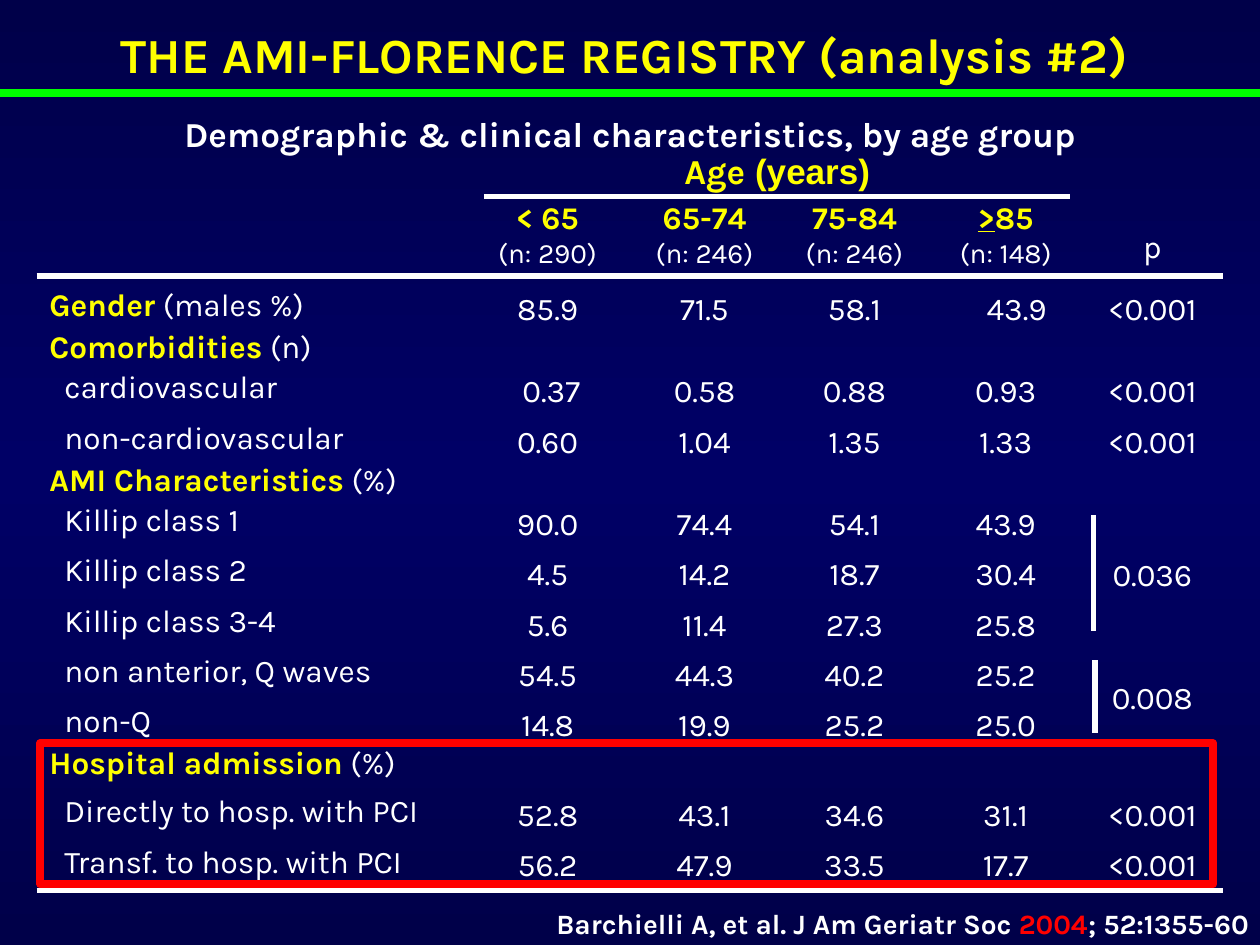
import copy
import dataclasses

import pptx
import pptx.dml.color
import pptx.enum.shapes
import pptx.enum.text
import pptx.oxml
import pptx.oxml.ns
import pptx.util

Pt = pptx.util.Pt
qn = pptx.oxml.ns.qn
Align = pptx.enum.text.PP_ALIGN
Anchor = pptx.enum.text.MSO_ANCHOR


@dataclasses.dataclass(frozen=True)
class Theme:
    font: str = "Karla"
    second_font: str = "Arial"
    white: str = "FFFFFF"
    yellow: str = "FFFF00"
    red: str = "FF0000"
    green: str = "00FF00"
    edge_blue: str = "000049"
    middle_blue: str = "000066"
    title: int = 28
    subtitle: int = 20
    body: int = 18
    small: int = 16


THEME = Theme()
HEADING = {"color": THEME.yellow, "bold": True}
NO_GRID_STYLE = "{2D5ABB26-0587-4C30-8999-92F81FD0307C}"

TABLE_LEFT, TABLE_TOP = 21, 111
COLUMN_WIDTHS = [245.5, 92.9, 86.4, 85, 87.8, 79.9]
HEADER_HEIGHT, ROW_HEIGHT, CLOSE_ROW, SECTION_ROW = 52, 28.8, 25, 21.5
INSET, VALUE_TOP, LABEL_TOP, LABEL_INDENT = 7.2, 3.6, 1.4, 8.6

AGE_GROUPS = [
    ([("< 65", HEADING)], "(n: 290)"),
    ([("65-74", HEADING)], "(n: 246)"),
    ([("75-84", HEADING)], "(n: 246)"),
    ([(">", {**HEADING, "underline": True}), ("85", HEADING)], "(n: 148)"),
]

# Row height, yellow heading, label, values by age group, p
ROWS = [
    (CLOSE_ROW, "Gender", " (males %)", "85.9 71.5 58.1 43.9", "<0.001"),
    (SECTION_ROW, "Comorbidities", " (n)", "", ""),
    (29, "", "cardiovascular", "0.37 0.58 0.88 0.93", "<0.001"),
    (CLOSE_ROW, "", "non-cardiovascular", "0.60 1.04 1.35 1.33", "<0.001"),
    (SECTION_ROW, "AMI Characteristics", " (%)", "", ""),
    (ROW_HEIGHT, "", "Killip class 1", "90.0 74.4 54.1 43.9", "0.036"),
    (ROW_HEIGHT, "", "Killip class 2", "4.5 14.2 18.7 30.4", ""),
    (ROW_HEIGHT, "", "Killip class 3-4", "5.6 11.4 27.3 25.8", ""),
    (ROW_HEIGHT, "", "non anterior, Q waves", "54.5 44.3 40.2 25.2", "0.008"),
    (25.3, "", "non-Q", "14.8 19.9 25.2 25.0", ""),
    (26, "Hospital admission", " (%)", "", ""),
    (ROW_HEIGHT, "", "Directly to hosp. with PCI", "52.8 43.1 34.6 31.1", "<0.001"),
    (ROW_HEIGHT, "", "Transf. to hosp. with PCI", "56.2 47.9 33.5 17.7", "<0.001"),
]
SHARED_P_ROWS = [(6, 8), (9, 10)]
# Extra left inset of values set off centre, by (row, column)
VALUE_SHIFTS = {(1, 4): 12.6, (3, 1): 4.2}


def rgb(color):
    return pptx.dml.color.RGBColor.from_string(color)


def write_text(frame, paragraphs, align=Align.CENTER, line_spacing=None, **base):
    """Each paragraph is a list of (text, format changes) runs."""
    for index, runs in enumerate(paragraphs):
        paragraph = frame.add_paragraph() if index else frame.paragraphs[0]
        paragraph.alignment = align
        if line_spacing:
            paragraph.line_spacing = line_spacing
        for text, changes in runs:
            look = {"size": THEME.body, "font": THEME.font, "color": THEME.white,
                    "bold": False, "underline": False, **base, **changes}
            run = paragraph.add_run()
            run.text = text
            run.font.size = Pt(look["size"])
            run.font.name = look["font"]
            run.font.bold = look["bold"]
            run.font.underline = look["underline"]
            run.font.color.rgb = rgb(look["color"])


def set_margins(target, left=INSET, top=VALUE_TOP, right=INSET, bottom=0):
    target.margin_left, target.margin_top = Pt(left), Pt(top)
    target.margin_right, target.margin_bottom = Pt(right), Pt(bottom)


def add_text_box(slide, left, top, width, height, paragraphs, anchor=Anchor.TOP, **look):
    box = slide.shapes.add_textbox(Pt(left), Pt(top), Pt(width), Pt(height))
    frame = box.text_frame
    frame.word_wrap = True
    frame.vertical_anchor = anchor
    write_text(frame, paragraphs, **look)
    return frame


def add_line(slide, x1, y1, x2, y2, color=THEME.white, weight=3):
    line = slide.shapes.add_connector(
        pptx.enum.shapes.MSO_CONNECTOR.STRAIGHT, Pt(x1), Pt(y1), Pt(x2), Pt(y2))
    line.line.color.rgb = rgb(color)
    line.line.width = Pt(weight)
    line._element.spPr.append(pptx.oxml.parse_xml(
        '<a:effectLst xmlns:a="http://schemas.openxmlformats.org/drawingml/2006/main"/>'))


def add_frame(slide, left, top, width, height):
    shape = slide.shapes.add_shape(pptx.enum.shapes.MSO_SHAPE.RECTANGLE,
                                   Pt(left), Pt(top), Pt(width), Pt(height))
    shape.shadow.inherit = False
    shape.fill.background()
    shape.line.color.rgb = rgb(THEME.red)
    shape.line.width = Pt(4.5)


def paint_background(slide):
    fill = slide.background.fill
    fill.gradient()
    fill.gradient_angle = 90
    first = next(slide._element.iter(qn("a:gs")))
    first.addnext(copy.deepcopy(first))
    colors = [THEME.edge_blue, THEME.middle_blue, THEME.edge_blue]
    for stop, position, color in zip(fill.gradient_stops, [0, 0.5, 1], colors):
        stop.position = position
        stop.color.rgb = rgb(color)


def fill_header(table):
    for column, (group, count) in enumerate(AGE_GROUPS, start=1):
        write_text(table.cell(0, column).text_frame,
                   [group, [(count, {"size": THEME.small})]])
    p_cell = table.cell(0, len(COLUMN_WIDTHS) - 1)
    write_text(p_cell.text_frame, [[("p", {})]])
    p_cell.vertical_anchor = Anchor.BOTTOM
    set_margins(p_cell, bottom=11)


def fill_row(table, row, heading, label, values, p_value):
    p_column = len(COLUMN_WIDTHS) - 1
    label_cell = table.cell(row, 0)
    set_margins(label_cell, left=INSET + (0 if heading else LABEL_INDENT),
                top=LABEL_TOP if values else 0)
    runs = [(heading, HEADING)] if heading else []
    write_text(label_cell.text_frame, [runs + [(label, {})]], align=Align.LEFT)
    if not values:
        label_cell.merge(table.cell(row, p_column))
    for column, value in enumerate(values.split(), start=1):
        cell = table.cell(row, column)
        set_margins(cell, left=INSET + VALUE_SHIFTS.get((row, column), 0))
        write_text(cell.text_frame, [[(value, {})]])
    if p_value:
        write_text(table.cell(row, p_column).text_frame, [[(p_value, {})]])


def add_registry_table(slide):
    heights = [HEADER_HEIGHT] + [row[0] for row in ROWS]
    table = slide.shapes.add_table(
        len(heights), len(COLUMN_WIDTHS), Pt(TABLE_LEFT), Pt(TABLE_TOP),
        Pt(sum(COLUMN_WIDTHS)), Pt(sum(heights))).table
    table.first_row = table.horz_banding = False
    table._tbl.tblPr.find(qn("a:tableStyleId")).text = NO_GRID_STYLE
    for column, width in zip(table.columns, COLUMN_WIDTHS):
        column.width = Pt(width)
    for row, height in zip(table.rows, heights):
        row.height = Pt(height)
    for cell in table.iter_cells():
        cell.fill.background()
        set_margins(cell)
    fill_header(table)
    for index, (_, *content) in enumerate(ROWS, start=1):
        fill_row(table, index, *content)
    p_column = len(COLUMN_WIDTHS) - 1
    for first, last in SHARED_P_ROWS:
        cell = table.cell(first, p_column)
        cell.merge(table.cell(last, p_column))
        cell.vertical_anchor = Anchor.MIDDLE
        set_margins(cell, top=0)


def main():
    presentation = pptx.Presentation()
    presentation.slide_width, presentation.slide_height = Pt(720), Pt(540)
    slide = presentation.slides.add_slide(presentation.slide_layouts[6])
    paint_background(slide)

    add_text_box(slide, 4.3, 3.6, 712, 71.3, [
        [("THE AMI-FLORENCE REGISTRY (analysis #2) ",
          {"size": THEME.title, "color": THEME.yellow})],
        [("Demographic & clinical characteristics, by age group",
          {"size": THEME.subtitle})],
    ], anchor=Anchor.MIDDLE, line_spacing=1.7, bold=True)
    add_line(slide, 0, 53.3, 720, 53.3, color=THEME.green, weight=4.5)

    add_text_box(slide, 373.7, 82, 141, 31.7,
                 [[("Age", {}), (" (years)", {"font": THEME.second_font})]],
                 size=THEME.subtitle, **HEADING)
    add_registry_table(slide)
    add_line(slide, 276.5, 112.5, 611.3, 112.5)
    for y in (157.7, 509):
        add_line(slide, 21, y, 699, y)
    for x, top, bottom in ((625, 294.5, 360.7), (625.7, 377.3, 419)):
        add_line(slide, x, top, x, bottom)
    add_frame(slide, 23, 424.8, 670.3, 80.6)

    citation = add_text_box(slide, 225.4, 514, 488.2, 23, [
        [("Barchielli A, et al. J Am Geriatr Soc ", {}),
         ("2004", {"color": THEME.red}), ("; 52:1355-60", {})],
    ], align=Align.RIGHT, line_spacing=1.2, size=THEME.small, bold=True)
    set_margins(citation, 0, 0, 0, 0)
    presentation.save("out.pptx")


if __name__ == "__main__":
    main()
